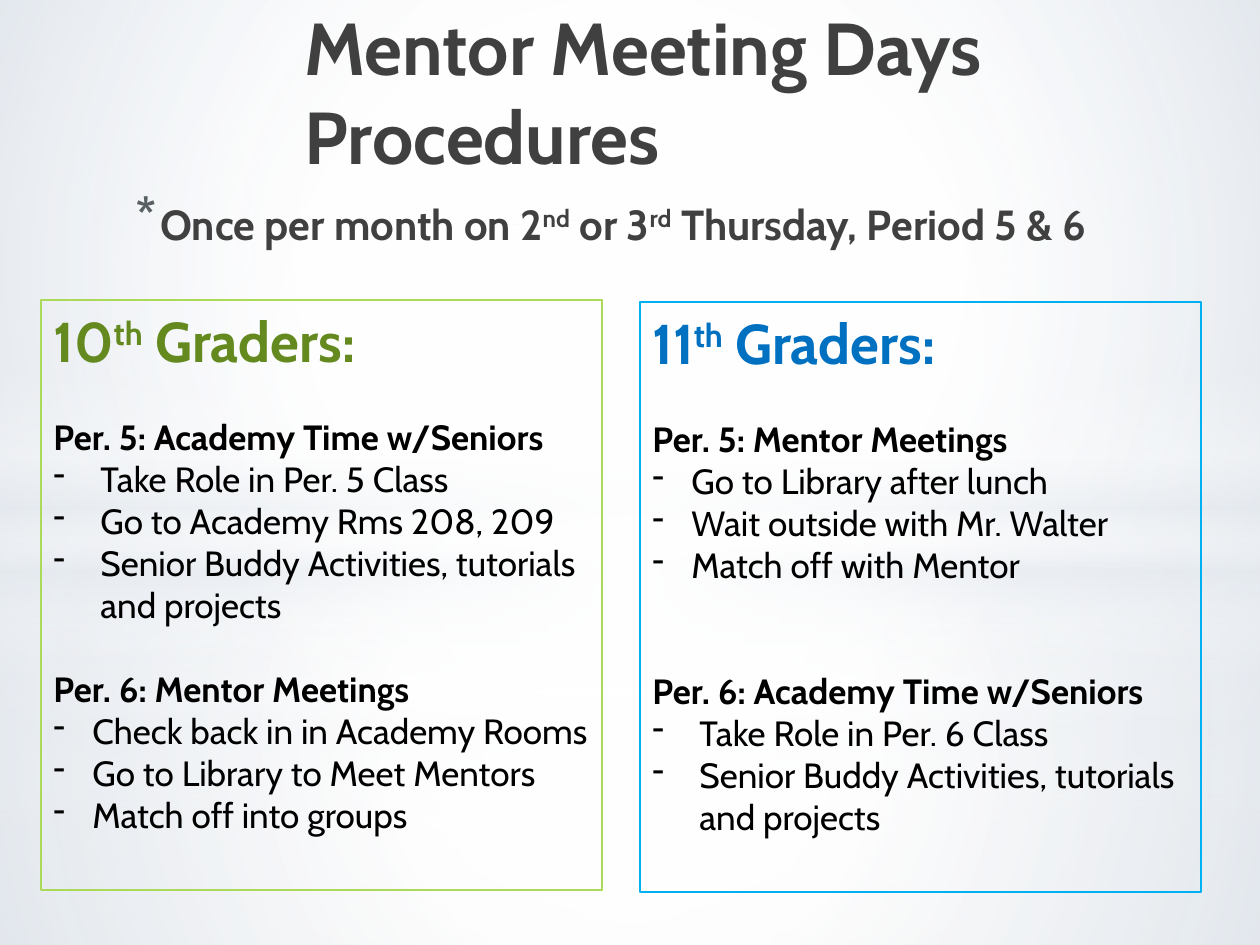
import pptx
import pptx.util
import pptx.dml.color
import pptx.enum.shapes
import pptx.enum.text
import pptx.oxml.ns
import lxml.etree

PX = 914400 / 126
COLORS = {"dark": "404040", "black": "000000", "star": "586064",
          "white": "FFFFFF", "mist": "E4E9EF", "pale": "F4F4F4", "gray": "CCCCCC",
          "green": "63891F", "green_line": "ABD958",
          "blue": "0070C0", "blue_line": "00B0F0"}
qn = pptx.oxml.ns.qn
sub = lxml.etree.SubElement


def set_gradient(fill, root, stops, focus):
    """Stops are (position, colour, opacity); without a focus it runs downwards."""
    fill.gradient()
    grad = root.find(".//" + qn("a:gradFill"))
    for child in list(grad):
        grad.remove(child)
    gs_list = sub(grad, qn("a:gsLst"))
    for pos, color, opacity in stops:
        gs = sub(gs_list, qn("a:gs"), pos=str(pos * 1000))
        clr = sub(gs, qn("a:srgbClr"), val=COLORS[color])
        if opacity < 100:
            sub(clr, qn("a:alpha"), val=str(opacity * 1000))
    if focus:
        shade = sub(grad, qn("a:path"), path="circle")
        sub(shade, qn("a:fillToRect"),
            **{side: str(v * 1000) for side, v in zip("ltrb", focus)})
    else:
        sub(grad, qn("a:lin"), ang="5400000", scaled="0")


def add_line(p, text, size, color, bold, bullet=None, left=0, hang=0):
    """Every second part between | marks is superscript."""
    if bullet:
        pPr = p._p.get_or_add_pPr()
        pPr.set("marL", str(round(left * PX)))
        pPr.set("indent", str(round(-hang * PX)))
        if bullet == "*":
            sub(sub(pPr, qn("a:buClr")), qn("a:srgbClr"), val=COLORS["star"])
            sub(pPr, qn("a:buSzPct"), val="130000")
        sub(pPr, qn("a:buChar"), char=bullet)
    for i, part in enumerate(text.split("|")):
        r = p.add_run()
        r.text = part
        r.font.name = "Cabin"
        r.font.size = pptx.util.Pt(size)
        r.font.bold = bold
        r.font.color.rgb = pptx.dml.color.RGBColor.from_string(COLORS[color])
        if i % 2:
            r._r.get_or_add_rPr().set("baseline", "30000")


prs = pptx.Presentation()
prs.slide_width = round(1260 * PX)
prs.slide_height = round(945 * PX)
s = prs.slides.add_slide(prs.slide_layouts[6])

# Background
set_gradient(s.background.fill, s._element,
             [(0, "pale", 100), (60, "white", 100), (100, "gray", 100)], (20, 10, 20, 60))

# Soft light layers: shape, top, height, stops, focus
RECT = pptx.enum.shapes.MSO_SHAPE.RECTANGLE
OVAL = pptx.enum.shapes.MSO_SHAPE.OVAL
center = (50, 50, 50, 50)
band = [(0, "white", 0), (29, "white", 30), (45, "mist", 40),
        (55, "white", 26), (65, "mist", 60), (100, "white", 0)]
layers = []
for split, floor_h, band_top, light, glow in [(703, 242, 519, 0, 56), (533, 412, 365, 1, 54)]:
    layers += [
        (RECT, split, floor_h, [(0, "white", 91 + light), (37, "white", 76 + light),
                                (100, "mist", 79 + light)], center),
        (RECT, 0, split, [(0, "white", 89 + light), (48, "white", 62 + light),
                          (100, "mist", 79 + light)], center),
        (RECT, band_top, 315, band, None),
        (OVAL, 220, 703, [(0, "white", 100), (glow, "white", 0)], center)]
for kind, top, height, stops, focus in layers:
    sp = s.shapes.add_shape(kind, 0, round(top * PX), prs.slide_width, round(height * PX))
    sp.shadow.inherit = False
    sp.line.fill.background()
    set_gradient(sp.fill, sp._element, stops, focus)

# Schedule line
sp = s.shapes.add_textbox(*[round(v * PX) for v in (116, 192, 1121, 89)])
tf = sp.text_frame
tf.word_wrap = True
add_line(tf.paragraphs[0], "Once per month on 2|nd| or 3|rd| Thursday, Period 5 & 6",
         24, "dark", True, "*", 32, 25)

# Title
sp = s.shapes.add_textbox(*[round(v * PX) for v in (292, 50, 964, 135)])
tf = sp.text_frame
tf.word_wrap = True
tf.vertical_anchor = pptx.enum.text.MSO_ANCHOR.BOTTOM
add_line(tf.paragraphs[0], "Mentor Meeting Days Procedures", 42, "dark", True)

# Grade panels: left, top, colour, heading, periods (heading, space before, indent, steps)
panels = [
    (41, 300, "green", "10|th| Graders:", [
        ("Per. 5: Academy Time w/Seniors", 24, 47,
         ["Take Role in Per. 5 Class", "Go to Academy Rms 208, 209",
          "Senior Buddy Activities, tutorials and projects"]),
        ("Per. 6: Mentor Meetings", 24, 39,
         ["Check back in in Academy Rooms", "Go to Library to Meet Mentors",
          "Match off into groups"])]),
    (640, 302, "blue", "11|th| Graders:", [
        ("Per. 5: Mentor Meetings", 24, 39,
         ["Go to Library after lunch", "Wait outside with Mr. Walter",
          "Match off with Mentor"]),
        ("Per. 6: Academy Time w/Seniors", 48, 47,
         ["Take Role in Per. 6 Class",
          "Senior Buddy Activities, tutorials and projects"])])]
for left, top, color, heading, periods in panels:
    sp = s.shapes.add_textbox(*[round(v * PX) for v in (left, top, 561, 590)])
    sp.line.color.rgb = pptx.dml.color.RGBColor.from_string(COLORS[color + "_line"])
    sp.line.width = pptx.util.Pt(0.75)
    tf = sp.text_frame
    tf.word_wrap = True
    add_line(tf.paragraphs[0], heading, 32, color, True)
    for period, space, indent, steps in periods:
        p = tf.add_paragraph()
        p.space_before = pptx.util.Pt(space)
        add_line(p, period, 20, "black", True)
        for step in steps:
            add_line(tf.add_paragraph(), step, 20, "black", False, "-", indent, indent)

prs.save("out.pptx")
